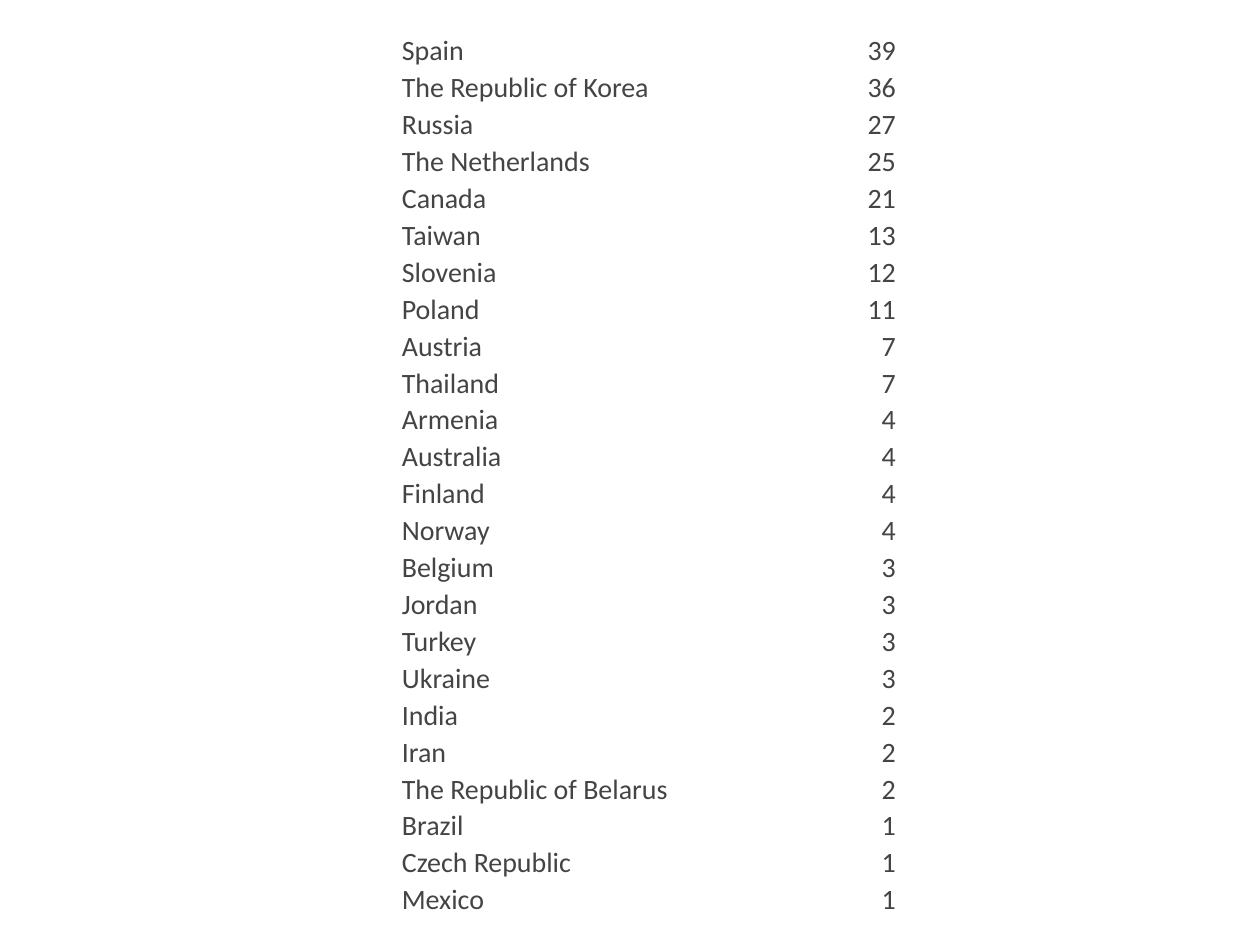
from pptx import Presentation
from pptx import util as u
from pptx.dml.color import RGBColor
from pptx.enum import text
from pptx.oxml import parse_xml
from pptx.oxml.ns import nsdecls

TEXT_GREY = RGBColor(0x44, 0x44, 0x44)
BORDER_WHITE = RGBColor(0xFF, 0xFF, 0xFF)

COLUMN_WIDTHS = (188.64, 95.04)
ROW_HEIGHT = 21.09
COUNTRY_COUNTS = [
    ("Spain", 39),
    ("The Republic of Korea", 36),
    ("Russia", 27),
    ("The Netherlands", 25),
    ("Canada", 21),
    ("Taiwan", 13),
    ("Slovenia", 12),
    ("Poland", 11),
    ("Austria", 7),
    ("Thailand", 7),
    ("Armenia", 4),
    ("Australia", 4),
    ("Finland", 4),
    ("Norway", 4),
    ("Belgium", 3),
    ("Jordan", 3),
    ("Turkey", 3),
    ("Ukraine", 3),
    ("India", 2),
    ("Iran", 2),
    ("The Republic of Belarus", 2),
    ("Brazil", 1),
    ("Czech Republic", 1),
    ("Mexico", 1),
]


def set_borders(cell, color, width):
    properties = cell._tc.get_or_add_tcPr()
    # Border lines must come before the fill, in this order.
    for index, side in enumerate(("lnL", "lnR", "lnT", "lnB")):
        properties.insert(index, parse_xml(
            f'<a:{side} {nsdecls("a")} w="{u.Pt(width)}"><a:solidFill>'
            f'<a:srgbClr val="{color}"/></a:solidFill></a:{side}>'))


def fill_cell(cell, value, alignment):
    cell.text = str(value)
    cell.vertical_anchor = text.MSO_ANCHOR.BOTTOM
    cell.margin_left = cell.margin_right = cell.margin_top = u.Pt(0.72)
    cell.margin_bottom = u.Pt(0)
    cell.fill.background()
    set_borders(cell, BORDER_WHITE, 1)
    paragraph = cell.text_frame.paragraphs[0]
    paragraph.alignment = alignment
    paragraph.font.name = "Calibri"
    paragraph.font.size = u.Pt(16)
    paragraph.font.bold = False
    paragraph.font.color.rgb = TEXT_GREY


def add_country_table(slide, left, top):
    row_count = len(COUNTRY_COUNTS)
    table = slide.shapes.add_table(
        row_count, len(COLUMN_WIDTHS), u.Pt(left), u.Pt(top),
        u.Pt(sum(COLUMN_WIDTHS)), u.Pt(ROW_HEIGHT * row_count)).table
    table.first_row = table.horz_banding = False
    for column, width in zip(table.columns, COLUMN_WIDTHS):
        column.width = u.Pt(width)
    for row, (country, count) in zip(table.rows, COUNTRY_COUNTS):
        row.height = u.Pt(ROW_HEIGHT)
        fill_cell(row.cells[0], country, text.PP_ALIGN.LEFT)
        fill_cell(row.cells[1], count, text.PP_ALIGN.RIGHT)


def main():
    presentation = Presentation()
    presentation.slide_width = u.Pt(720)
    presentation.slide_height = u.Pt(540)
    slide = presentation.slides.add_slide(presentation.slide_layouts[6])
    add_country_table(slide, left=228.96, top=18)
    presentation.save("out.pptx")


if __name__ == "__main__":
    main()
